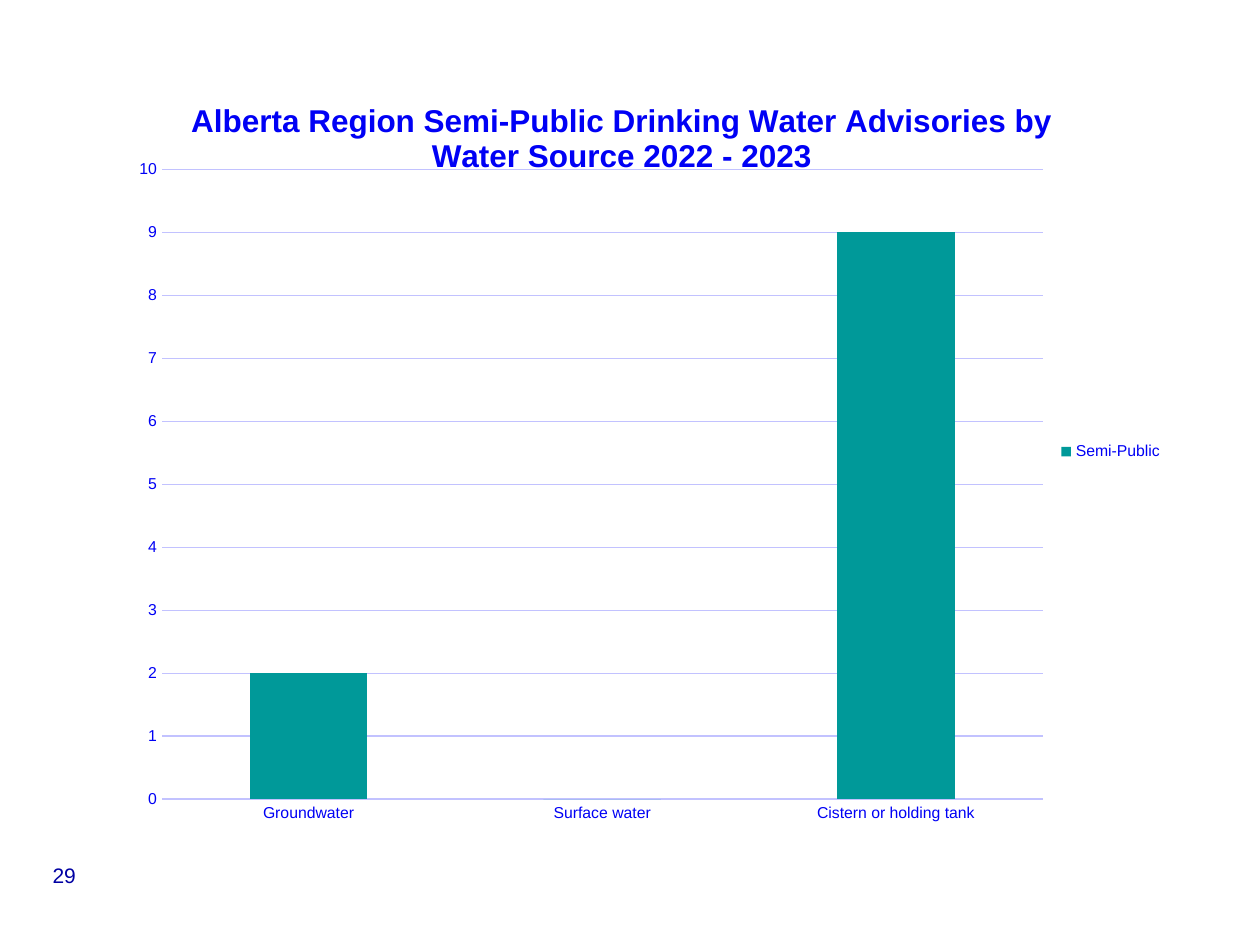
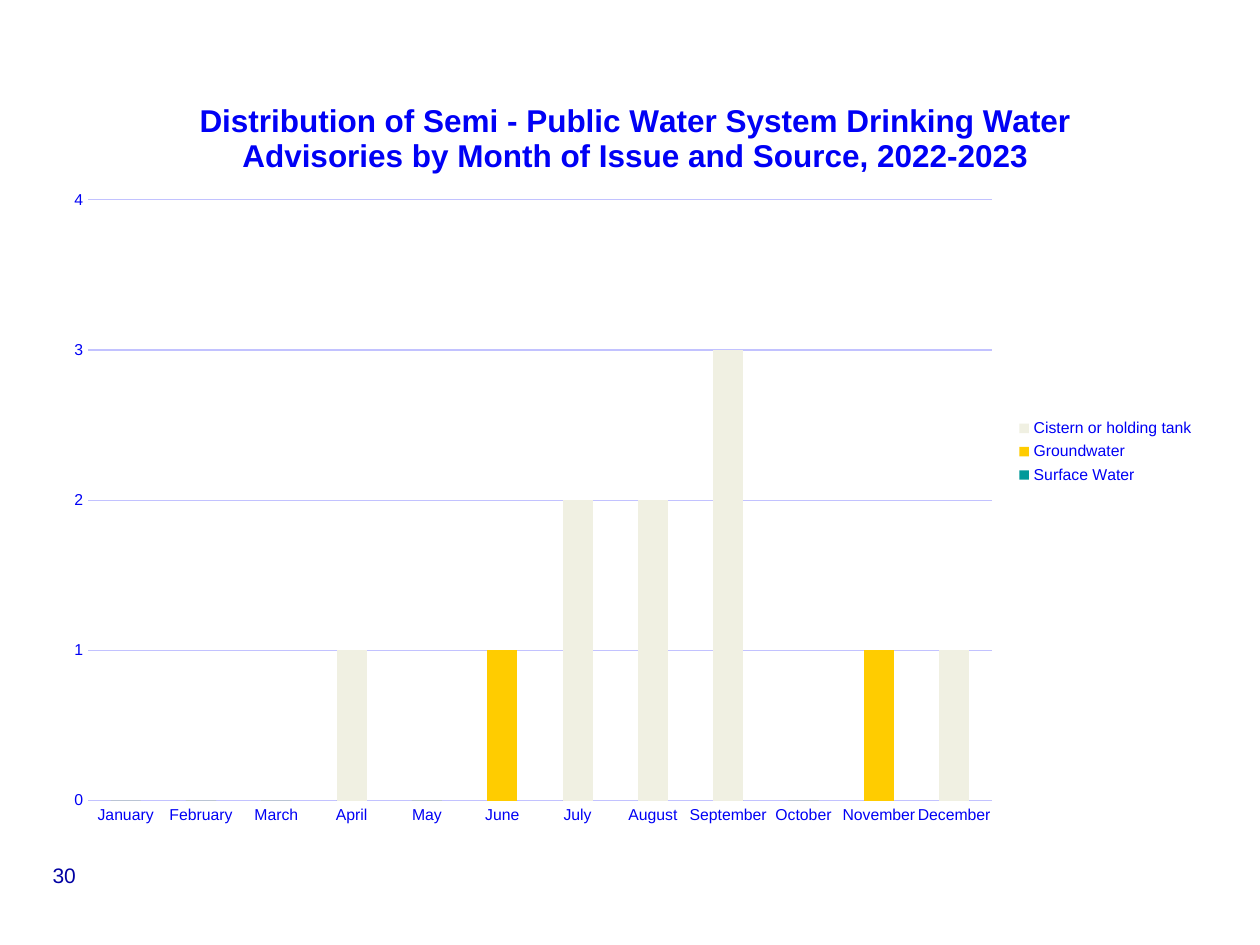
"""Build two slides of stacked column charts on drinking water advisories."""
from pptx import Presentation, util as u
from pptx.chart.data import CategoryChartData
from pptx.dml.color import RGBColor
from pptx.enum import chart as c, text
from pptx.oxml import ns, parse_xml

PX = 9144
FONT, BLUE, NAVY, GRID = "Arial", "0000F5", "0000A3", "C2C2FF"
TEAL, YELLOW, IVORY = "009999", "FFCC00", "F0F0E2"


def style(font, size, color, bold=False):
    font.name, font.size, font.bold = FONT, u.Pt(size), bold
    font.color.rgb = RGBColor.from_string(color)


def place(parent, index, **fractions):
    for old in parent.findall(ns.qn("c:layout")):
        parent.remove(old)
    target = '<c:layoutTarget val="inner"/>' if "w" in fractions else ""
    modes = "".join(f'<c:{key}Mode val="edge"/>' for key in "xy")
    values = "".join(f'<c:{key} val="{value}"/>' for key, value in fractions.items())
    parent.insert(index, parse_xml(
        f'<c:layout {ns.nsdecls("c")}><c:manualLayout>{target}{modes}{values}'
        "</c:manualLayout></c:layout>"))


charts = [
    dict(number="29", width=893, maximum=10,
         title="Alberta Region Semi-Public Drinking Water Advisories by Water Source 2022 - 2023",
         title_at=dict(x=0.12, y=0.04),
         plot=dict(x=0.099, y=0.137, w=0.783, h=0.81),
         categories=["Groundwater", "Surface water", "Cistern or holding tank"],
         series=[("Semi-Public", [2, 0, 9], TEAL)]),
    dict(number="30", width=918, maximum=4,
         title="Distribution of Semi - Public Water System Drinking Water Advisories "
               "by Month of Issue and Source, 2022-2023",
         title_at=dict(x=0.124, y=0.04),
         plot=dict(x=0.0325, y=0.176, w=0.7815, h=0.773),
         categories=["January", "February", "March", "April", "May", "June", "July",
                     "August", "September", "October", "November", "December"],
         series=[("Surface Water", [0] * 12, TEAL),
                 ("Groundwater", [0, 0, 0, 0, 0, 1, 0, 0, 0, 0, 1, 0], YELLOW),
                 ("Cistern or holding tank", [0, 0, 0, 1, 0, 0, 2, 2, 3, 0, 0, 1], IVORY)]),
]

presentation = Presentation()
presentation.slide_width, presentation.slide_height = 1000 * PX, 750 * PX

for content in charts:
    slide = presentation.slides.add_slide(presentation.slide_layouts[6])

    number_box = slide.shapes.add_textbox(4 * PX, 682 * PX, 94 * PX, 30 * PX)
    number_box.text_frame.word_wrap = True
    paragraph = number_box.text_frame.paragraphs[0]
    paragraph.alignment, paragraph.line_spacing = text.PP_ALIGN.CENTER, 0.9
    run = paragraph.add_run()
    run.text = content["number"]
    style(run.font, 12, NAVY)

    data = CategoryChartData()
    data.categories = content["categories"]
    for name, values, color in content["series"]:
        data.add_series(name, values)
    chart = slide.shapes.add_chart(
        c.XL_CHART_TYPE.COLUMN_STACKED, 40 * PX, 50 * PX,
        content["width"] * PX, 617 * PX, data).chart
    style(chart.font, 10, "000066")

    chart.has_title = True
    run = chart.chart_title.text_frame.paragraphs[0].add_run()
    run.text = content["title"]
    style(run.font, 18, BLUE, True)
    place(chart.chart_title._element, 1, **content["title_at"])
    place(chart._chartSpace.chart.plotArea, 0, **content["plot"])

    chart.has_legend = True
    chart.legend.position = c.XL_LEGEND_POSITION.RIGHT
    chart.legend.include_in_layout = False
    style(chart.legend.font, 9, BLUE)

    plot = chart.plots[0]
    plot.gap_width, plot.overlap, plot.vary_by_categories = 150, 100, False
    for series, (name, values, color) in zip(plot.series, content["series"]):
        series.format.fill.solid()
        series.format.fill.fore_color.rgb = RGBColor.from_string(color)

    for axis in (chart.category_axis, chart.value_axis):
        axis.major_tick_mark = axis.minor_tick_mark = c.XL_TICK_MARK.NONE
        style(axis.tick_labels.font, 9, BLUE)
    value_axis = chart.value_axis
    value_axis.minimum_scale, value_axis.maximum_scale = 0, content["maximum"]
    value_axis.major_unit = 1
    value_axis.format.line.fill.background()
    for line in (chart.category_axis.format.line, value_axis.major_gridlines.format.line):
        line.color.rgb = RGBColor.from_string(GRID)
        line.width = u.Pt(0.75)

presentation.save("out.pptx")
